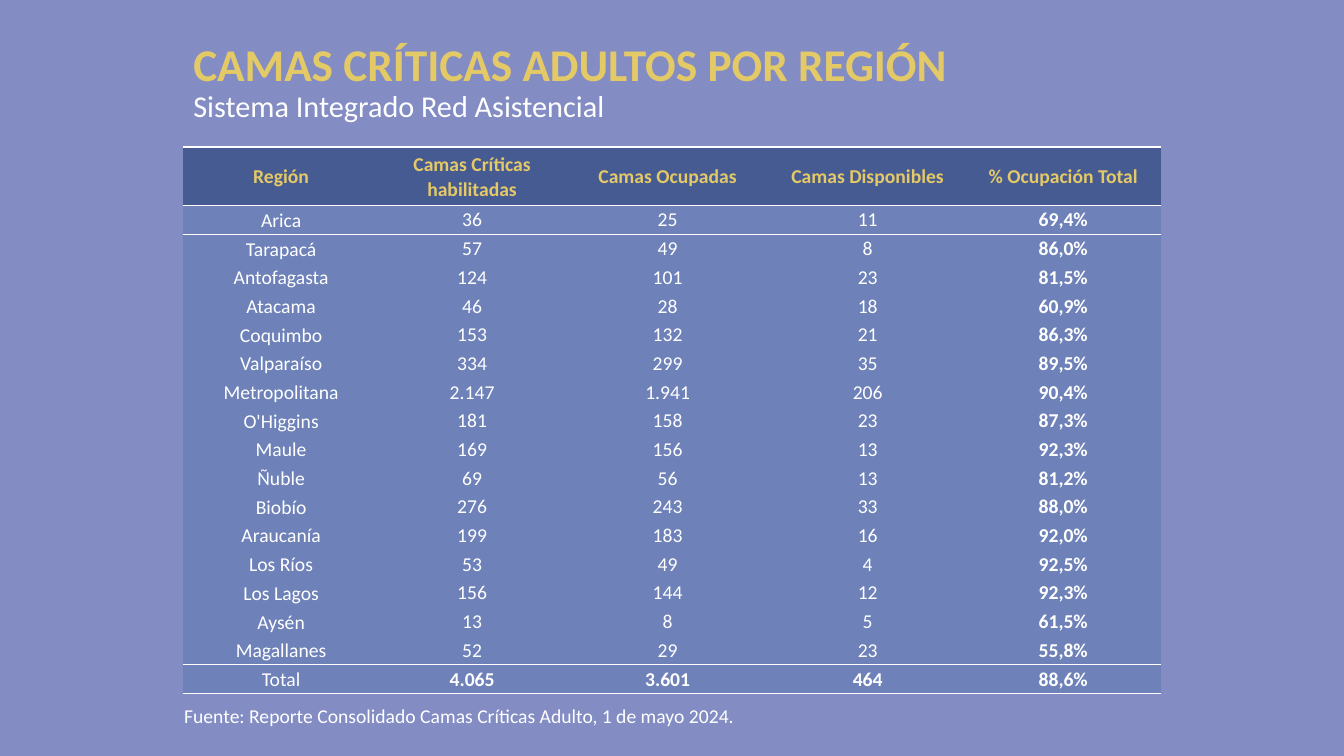
"""Build the slide on critical adult beds by region."""
from lxml.etree import SubElement
from pptx import Presentation
from pptx.dml.color import RGBColor
from pptx.enum.text import MSO_ANCHOR as Anchor, PP_ALIGN as Align
from pptx.oxml.ns import qn
from pptx.util import Pt

YELLOW, WHITE, HEADER_BLUE, BODY_BLUE = "E4C967", "FFFFFF", "475B93", "6E82B9"
NO_STYLE = "{2D5ABB26-0587-4C30-8999-92F81FD0307C}"
COLUMN_WIDTHS = [139.68, 133.2, 146.16, 139.68, 139.68]
HEADER_HEIGHT, ROW_HEIGHT = 41.75, 20.5
ROWS = [
    ["Región", "Camas Críticas habilitadas", "Camas Ocupadas", "Camas Disponibles", "% Ocupación Total"],
    ["Arica", "36", "25", "11", "69,4%"],
    ["Tarapacá", "57", "49", "8", "86,0%"],
    ["Antofagasta", "124", "101", "23", "81,5%"],
    ["Atacama", "46", "28", "18", "60,9%"],
    ["Coquimbo", "153", "132", "21", "86,3%"],
    ["Valparaíso", "334", "299", "35", "89,5%"],
    ["Metropolitana", "2.147", "1.941", "206", "90,4%"],
    ["O'Higgins", "181", "158", "23", "87,3%"],
    ["Maule", "169", "156", "13", "92,3%"],
    ["Ñuble", "69", "56", "13", "81,2%"],
    ["Biobío", "276", "243", "33", "88,0%"],
    ["Araucanía", "199", "183", "16", "92,0%"],
    ["Los Ríos", "53", "49", "4", "92,5%"],
    ["Los Lagos", "156", "144", "12", "92,3%"],
    ["Aysén", "13", "8", "5", "61,5%"],
    ["Magallanes", "52", "29", "23", "55,8%"],
    ["Total", "4.065", "3.601", "464", "88,6%"],
]
TOTAL_ROW = len(ROWS) - 1
TOP_RULES = {0, 1, TOTAL_ROW}
BOTTOM_RULES = {0, TOTAL_ROW - 1, TOTAL_ROW}


def color(hex_code):
    return RGBColor.from_string(hex_code)


def format_run(run, size, hex_code, bold=False):
    run.font.name = "Calibri"
    run.font.size = Pt(size)
    run.font.bold = bold
    run.font.color.rgb = color(hex_code)


presentation = Presentation()
presentation.slide_width, presentation.slide_height = Pt(960), Pt(540)
slide = presentation.slides.add_slide(presentation.slide_layouts[6])
slide.background.fill.solid()
slide.background.fill.fore_color.rgb = color("838DC4")

title = slide.shapes.add_textbox(Pt(131), Pt(25.2), Pt(828), Pt(68.4)).text_frame
title.word_wrap = True
title.vertical_anchor = Anchor.MIDDLE
heading = title.paragraphs[0]
heading.text = "CAMAS CRÍTICAS ADULTOS POR REGIÓN\vSistema Integrado Red Asistencial"
heading.line_spacing = 0.9
format_run(heading.runs[0], 32.4, YELLOW, True)
format_run(heading.runs[1], 21.6, WHITE)

table_height = HEADER_HEIGHT + ROW_HEIGHT * TOTAL_ROW
table = slide.shapes.add_table(
    len(ROWS), len(COLUMN_WIDTHS), Pt(131), Pt(105), Pt(sum(COLUMN_WIDTHS)), Pt(table_height)
).table
table.first_row = table.horz_banding = False
table._tbl.tblPr.find(qn("a:tableStyleId")).text = NO_STYLE
for column, width in zip(table.columns, COLUMN_WIDTHS):
    column.width = Pt(width)

for row_index, values in enumerate(ROWS):
    is_header = row_index == 0
    table.rows[row_index].height = Pt(HEADER_HEIGHT if is_header else ROW_HEIGHT)
    for column_index, value in enumerate(values):
        cell = table.cell(row_index, column_index)
        is_label = is_header or column_index == 0
        cell.margin_left = cell.margin_right = Pt(5 if is_label else 0.7)
        cell.margin_top = Pt(0 if is_label else 0.7)
        cell.margin_bottom = Pt(0)
        cell.vertical_anchor = Anchor.MIDDLE
        for tag, ruled_rows in (("a:lnT", TOP_RULES), ("a:lnB", BOTTOM_RULES)):
            if row_index in ruled_rows:
                line = SubElement(cell._tc.get_or_add_tcPr(), qn(tag), w=str(Pt(1)))
                SubElement(SubElement(line, qn("a:solidFill")), qn("a:srgbClr"), val=WHITE)
        cell.fill.solid()
        cell.fill.fore_color.rgb = color(HEADER_BLUE if is_header else BODY_BLUE)
        paragraph = cell.text_frame.paragraphs[0]
        paragraph.text = value
        paragraph.alignment = Align.CENTER
        if is_label:
            paragraph.line_spacing = 1.07
        bold = is_header or column_index == 4 or (row_index == TOTAL_ROW and column_index > 0)
        format_run(paragraph.runs[0], 14, YELLOW if is_header else WHITE, bold)

source = slide.shapes.add_textbox(Pt(124.5), Pt(499), Pt(746.6), Pt(24.5)).text_frame
source.word_wrap = True
source.text = "Fuente: Reporte Consolidado Camas Críticas Adulto, 1 de mayo 2024."
format_run(source.paragraphs[0].runs[0], 14, WHITE)

presentation.save("out.pptx")
